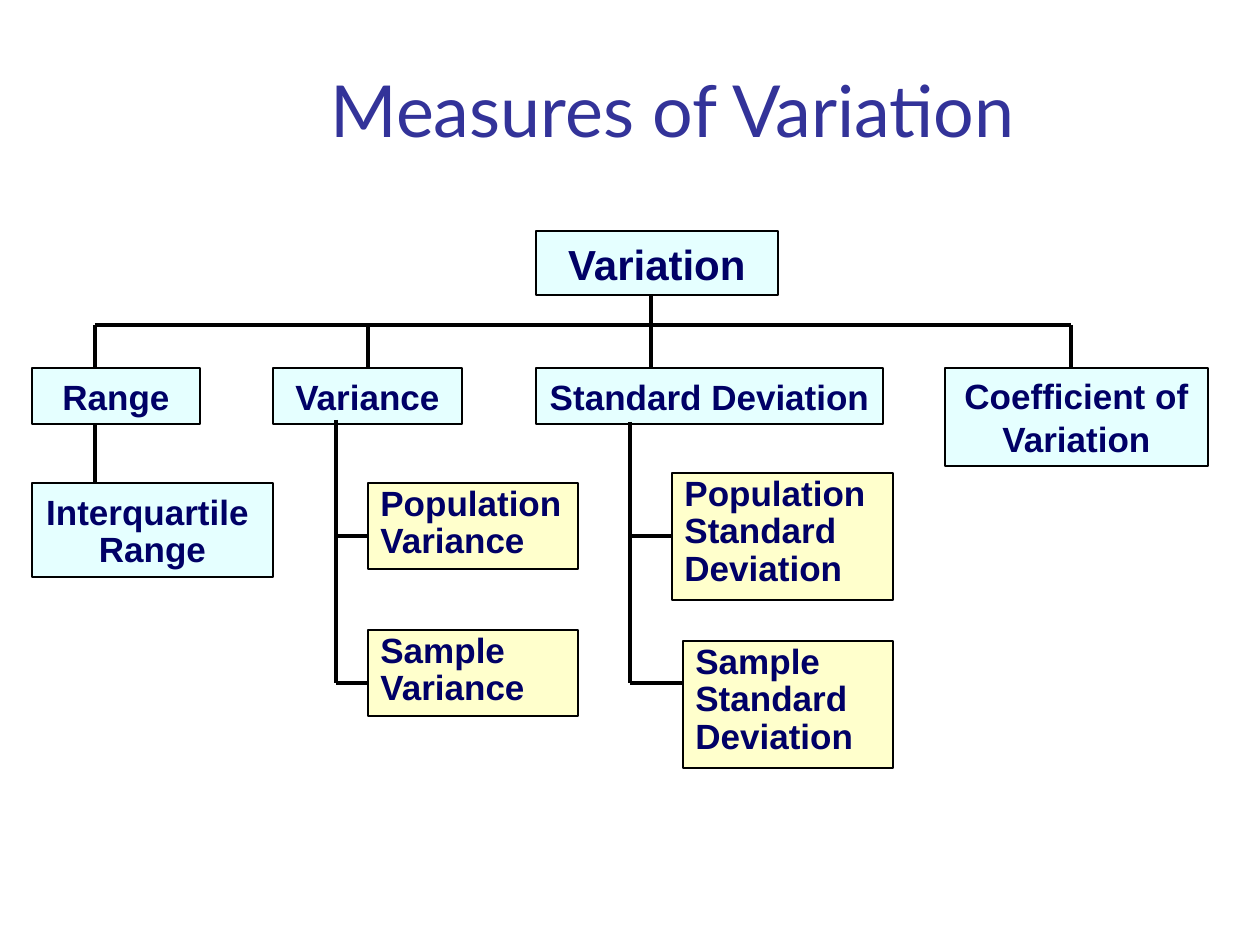
from lxml import etree
from pptx import Presentation
from pptx.dml.color import RGBColor
from pptx.enum.shapes import MSO_CONNECTOR, MSO_SHAPE
from pptx.enum.text import MSO_ANCHOR, PP_ALIGN
from pptx.oxml.ns import qn
from pptx.util import Emu, Pt

STRAIGHT, RECT = MSO_CONNECTOR.STRAIGHT, MSO_SHAPE.RECTANGLE
TOP, BOTTOM = MSO_ANCHOR.TOP, MSO_ANCHOR.BOTTOM
LEFT, CENTER = PP_ALIGN.LEFT, PP_ALIGN.CENTER

PX_PER_INCH = 126
BLUE, CREAM = "E5FFFF", "FFFFCC"
NAVY, INDIGO, BLACK = "000066", "333399", "000000"


def px(n):
    return Emu(round(n * 914400 / PX_PER_INCH))


def color(value):
    return RGBColor.from_string(value)


class Chart:
    """Draws the parts of the tree on one slide."""

    title_font = {"name": "Lato", "size": Pt(41)}
    box_font = {"name": "Arial", "size": Pt(20), "bold": True}

    def __init__(self, slide):
        self.slide = slide

    def text(self, sp, lines, font, ink, align, anchor=TOP, pitches=()):
        tf = sp.text_frame
        tf.word_wrap = True
        tf.vertical_anchor = anchor
        for i, line in enumerate(lines):
            p = tf.paragraphs[0] if i == 0 else tf.add_paragraph()
            p.alignment = align
            if pitches:
                p.line_spacing = Pt(pitches[min(i, len(pitches) - 1)])
            r = p.add_run()
            r.text = line
            for key, value in font.items():
                setattr(r.font, key, value)
            r.font.color.rgb = color(ink)

    def title(self, text, x, y, w, h):
        sp = self.slide.shapes.add_textbox(px(x), px(y), px(w), px(h))
        self.text(sp, [text], self.title_font, INDIGO, CENTER, BOTTOM)

    def box(self, lines, x, y, w, h, fill=BLUE, align=CENTER, pitches=(24.5, 21.5), size=20):
        """Pitches are the line heights in points of the first and later lines."""
        sp = self.slide.shapes.add_shape(RECT, px(x), px(y), px(w), px(h))
        sp.shadow.inherit = False
        sp.fill.solid()
        sp.fill.fore_color.rgb = color(fill)
        sp.line.color.rgb = color(BLACK)
        sp.line.width = Pt(1)
        font = {**self.box_font, "size": Pt(size)}
        self.text(sp, lines, font, NAVY, align, pitches=pitches)

    def leaf(self, lines, x, y, w, h):
        self.box(lines, x, y, w, h, CREAM, LEFT, (19.5, 21.5))

    def line(self, x1, y1, x2, y2):
        s = self.slide.shapes.add_connector(STRAIGHT, px(x1), px(y1), px(x2), px(y2))
        s.line.color.rgb = color(BLACK)
        s.line.width = Pt(2.25)
        etree.SubElement(s._element.spPr, qn("a:effectLst"))


def main():
    prs = Presentation()
    prs.slide_width, prs.slide_height = px(1260), px(945)
    chart = Chart(prs.slides.add_slide(prs.slide_layouts[6]))

    chart.title("Measures of Variation", 136, 53, 1074, 105)

    bar_y, row_y, row_h = 325, 368, 56
    branch_x = [95, 368, 651, 1071]
    chart.line(branch_x[0], bar_y, branch_x[-1], bar_y)
    for x in branch_x:
        chart.line(x, bar_y, x, row_y)
    chart.line(651, 295, 651, bar_y)
    chart.line(95, 420, 95, 483)

    chart.box(["Variation"], 536, 231, 242, 64, pitches=(29.5,), size=24)
    for name, x, w, h in [
        ("Range", 32, 168, row_h),
        ("Variance", 273, 189, row_h),
        ("Standard Deviation", 536, 347, row_h),
        ("Coefficient of Variation", 945, 263, 98),
    ]:
        chart.box([name], x, row_y, w, h)
    chart.box(["Interquartile ", "Range"], 32, 483, 241, 94)

    population_y, sample_y = 536, 683
    for trunk_x, top, population_x, sample_x in [(336, 420, 368, 368), (630, 422, 672, 683)]:
        chart.line(trunk_x, top, trunk_x, sample_y)
        chart.line(trunk_x, population_y, population_x, population_y)
        chart.line(trunk_x, sample_y, sample_x, sample_y)

    chart.leaf(["Population", "Variance"], 368, 483, 210, 86)
    chart.leaf(["Sample", "Variance"], 368, 630, 210, 86)
    chart.leaf(["Population", "Standard", "Deviation"], 672, 473, 221, 127)
    chart.leaf(["Sample", "Standard", "Deviation"], 683, 641, 210, 127)

    prs.save("out.pptx")


if __name__ == "__main__":
    main()
